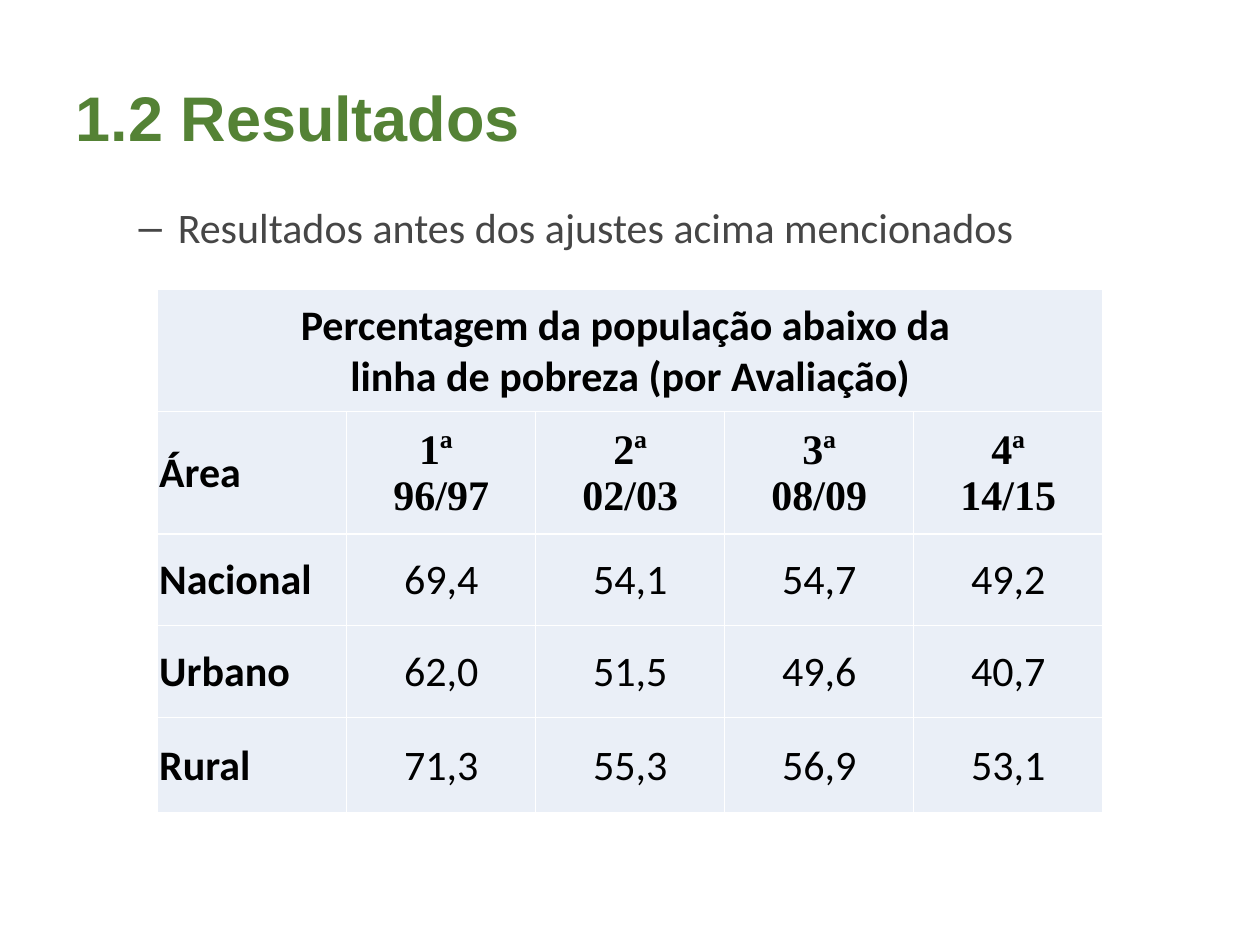
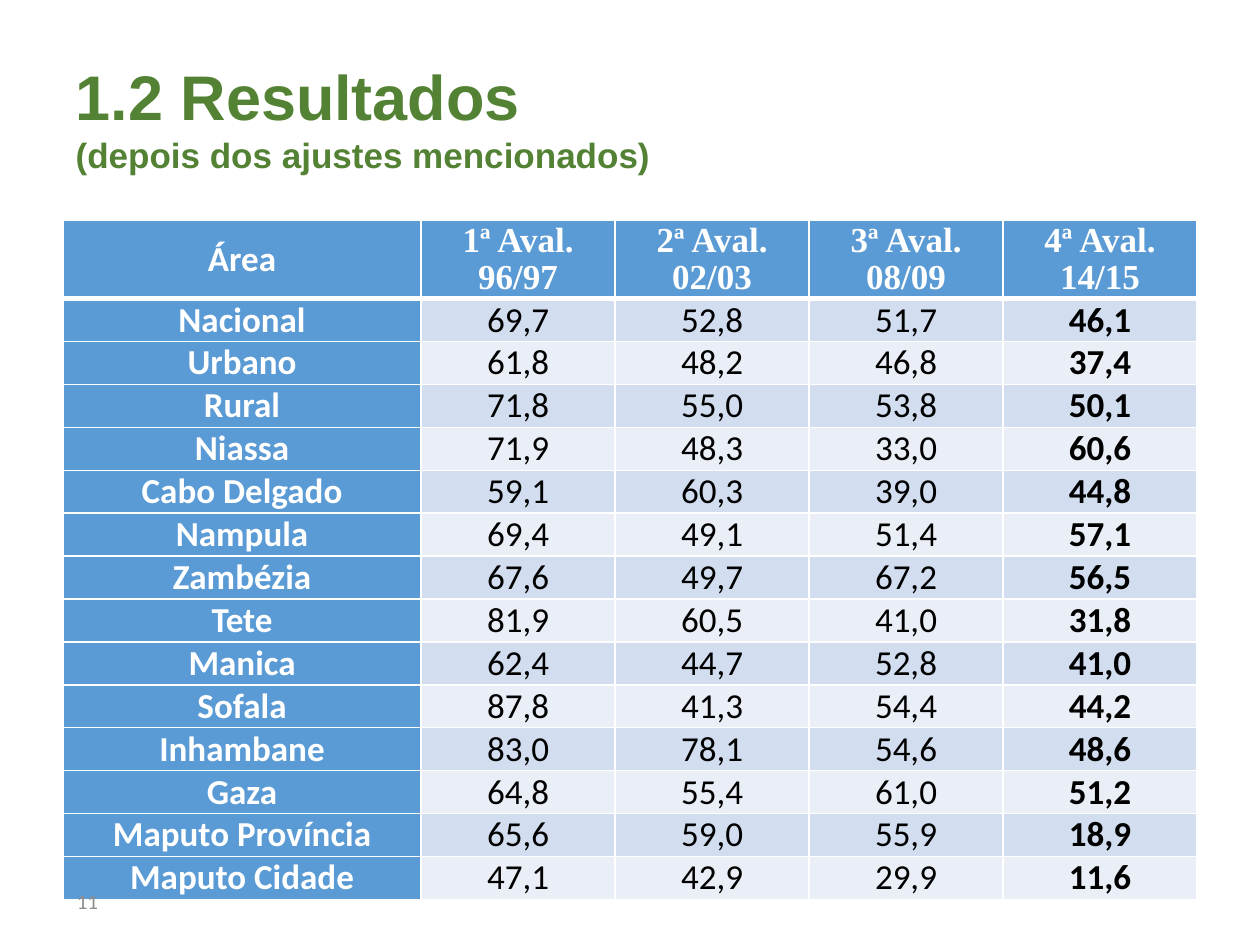
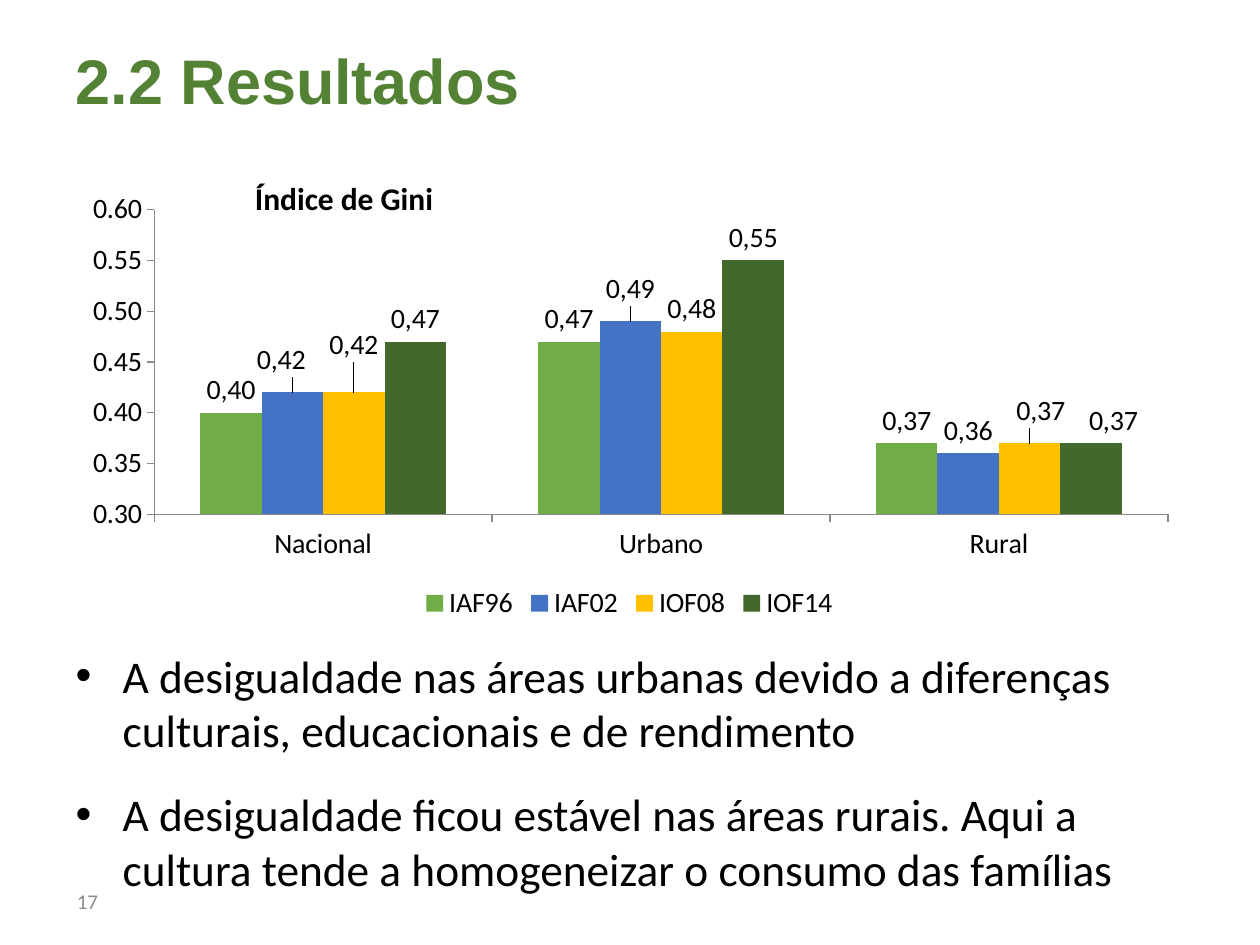
import pptx
import pptx.chart.data
import pptx.dml.color
import pptx.enum.chart
import pptx.enum.text
import pptx.util
from lxml import etree
from pptx.oxml.ns import qn

Cm, Pt = pptx.util.Cm, pptx.util.Pt
color = pptx.dml.color.RGBColor.from_string
ALIGN = pptx.enum.text.PP_ALIGN
ANCHOR = pptx.enum.text.MSO_ANCHOR

GREEN, BLACK, WHITE, GREY = "548235", "000000", "FFFFFF", "8C8C8C"
BLUE, PALE, BAND = "5B9BD5", "EAEFF7", "D2DEEF"
HEADING, BODY, SERIF = "Arial", "Calibri", "Times New Roman"


def style_font(font, name, size, hex_color, bold=False):
    font.name, font.size, font.bold = name, Pt(size), bold
    font.color.rgb = color(hex_color)


def place(parent, index, **values):
    """Give a chart part a manual layout, as fractions of the chart."""
    for old_layout in parent.findall(qn("c:layout")):
        parent.remove(old_layout)
    layout = etree.Element(qn("c:layout"))
    manual = etree.SubElement(layout, qn("c:manualLayout"))
    for key, value in values.items():
        etree.SubElement(manual, qn("c:" + key), val=str(value))
    parent.insert(index, layout)


presentation = pptx.Presentation()
presentation.slide_width, presentation.slide_height = Cm(25.4), Cm(19.05)

# Titles and page numbers: layout, title lines, title top, page number
slides = []
for layout_index, lines, top, number in [
    (1, ["1.2 Resultados"], 0.76, None),
    (5, ["1.2 Resultados", "(depois dos ajustes mencionados)"], 0.76, "11"),
    (1, ["2.2 Resultados"], 0, "17"),
]:
    slide = presentation.slides.add_slide(presentation.slide_layouts[layout_index])
    slides.append((slide, number))
    title = slide.shapes.title
    title.left, title.top, title.width, title.height = Cm(1.27), Cm(top), Cm(22.86), Cm(3.18)
    frame = title.text_frame
    frame.text = "\v".join(lines)
    frame.auto_size = pptx.enum.text.MSO_AUTO_SIZE.NONE
    frame.vertical_anchor = ANCHOR.MIDDLE
    frame.paragraphs[0].alignment = ALIGN.LEFT
    for run, size in zip(frame.paragraphs[0].runs, (36, 20)):
        style_font(run.font, HEADING, size, GREEN, True)

before_slide, after_slide, gini_slide = [slide for slide, number in slides]

# Bullet lists: slide, top, height, level, bullet, margin, hanging, size, colour, items
for slide, top, height, level, bullet, margin, hanging, size, hex_color, items in [
    (before_slide, 3.94, 13.08, 1, "–", 2.06, 0.79, 24, "464646",
     ["Resultados antes dos ajustes acima mencionados"]),
    (gini_slide, 12.93, 4.72, 0, "•", 0.95, 0.95, 25.9, BLACK,
     ["A desigualdade nas áreas urbanas devido a diferenças culturais, "
      "educacionais e de rendimento",
      "A desigualdade ficou estável nas áreas rurais. Aqui a cultura tende "
      "a homogeneizar o consumo das famílias"]),
]:
    body = slide.placeholders[1]
    body.left, body.top, body.width, body.height = Cm(1.27), Cm(top), Cm(22.86), Cm(height)
    body.text_frame.text = "\n".join(items)
    body.text_frame.auto_size = pptx.enum.text.MSO_AUTO_SIZE.NONE
    for index, paragraph in enumerate(body.text_frame.paragraphs):
        paragraph.level = level
        properties = paragraph._p.get_or_add_pPr()
        properties.set("marL", str(Cm(margin)))
        properties.set("indent", str(-Cm(hanging)))
        etree.SubElement(properties, qn("a:buChar"), char=bullet)
        paragraph.space_before = Pt(5 if index else 0)
        paragraph.space_after = Pt(12)
        style_font(paragraph.runs[0].font, BODY, size, hex_color)

# Poverty rates before and after the adjustments
before_rows = [
    ["Percentagem da população abaixo da \nlinha de pobreza (por Avaliação)"],
    ["Área", "1ª \n96/97", "2ª\n02/03", "3ª\n08/09", "4ª\n14/15"],
    ["Nacional", "69,4", "54,1", "54,7", "49,2"],
    ["Urbano", "62,0", "51,5", "49,6", "40,7"],
    ["Rural", "71,3", "55,3", "56,9", "53,1"],
]
after_rows = [
    ["Área", "1ª Aval.\n96/97", "2ª Aval.\n02/03", "3ª Aval.\n08/09", "4ª Aval.\n14/15"],
    ["Nacional", "69,7", "52,8", "51,7", "46,1"],
    ["Urbano", "61,8", "48,2", "46,8", "37,4"],
    ["Rural", "71,8", "55,0", "53,8", "50,1"],
    ["Niassa", "71,9", "48,3", "33,0", "60,6"],
    ["Cabo Delgado", "59,1", "60,3", "39,0", "44,8"],
    ["Nampula", "69,4", "49,1", "51,4", "57,1"],
    ["Zambézia", "67,6", "49,7", "67,2", "56,5"],
    ["Tete", "81,9", "60,5", "41,0", "31,8"],
    ["Manica", "62,4", "44,7", "52,8", "41,0"],
    ["Sofala", "87,8", "41,3", "54,4", "44,2"],
    ["Inhambane", "83,0", "78,1", "54,6", "48,6"],
    ["Gaza", "64,8", "55,4", "61,0", "51,2"],
    ["Maputo Província", "65,6", "59,0", "55,9", "18,9"],
    ["Maputo Cidade", "47,1", "42,9", "29,9", "11,6"],
]
for slide, rows, left, top, widths, heights, size, header, bold_columns in [
    (before_slide, before_rows, 3.18, 5.84, [3.81] * 5,
     [2.46, 2.46, 1.85, 1.85, 1.93], 24, 1, (0,)),
    (after_slide, after_rows, 1.27, 4.45, [7.22] + [3.91] * 4,
     [1.57] + [0.86] * 14, 20, 0, (0, 4)),
]:
    banded = slide is after_slide
    table = slide.shapes.add_table(len(rows), 5, Cm(left), Cm(top),
                                   Cm(sum(widths)), Cm(sum(heights))).table
    table.first_row = table.horz_banding = False
    for column, width in zip(table.columns, widths):
        column.width = Cm(width)
    for table_row, height in zip(table.rows, heights):
        table_row.height = Cm(height)
    if len(rows[0]) == 1:
        table.cell(0, 0).merge(table.cell(0, 4))

    for row, texts in enumerate(rows):
        for column, text in enumerate(texts):
            cell = table.cell(row, column)
            blue = banded and (row == 0 or column == 0)
            cell.margin_left = cell.margin_right = cell.margin_top = Cm(0 if banded else 0.03)
            cell.margin_bottom = 0
            cell.vertical_anchor = ANCHOR.MIDDLE
            cell.text_frame.text = text
            for paragraph in cell.text_frame.paragraphs:
                left_column = column == 0 and row > 0 and not banded
                paragraph.alignment = ALIGN.JUSTIFY if left_column else ALIGN.CENTER
                if banded and row == 0:
                    paragraph.line_spacing = 0.95
                style_font(paragraph.runs[0].font,
                           SERIF if row == header and column else BODY, size,
                           WHITE if blue else BLACK,
                           row <= header or column in bold_columns)
            # White rules, thicker below the blue header
            properties = cell._tc.get_or_add_tcPr()
            for side in ("lnL", "lnR", "lnT", "lnB"):
                thick = banded and (row, side) in ((0, "lnB"), (1, "lnT"))
                line = etree.SubElement(properties, qn("a:" + side), w=str(Pt(3 if thick else 1)))
                line_fill = etree.SubElement(line, qn("a:solidFill"))
                etree.SubElement(line_fill, qn("a:srgbClr"), val=WHITE)
            cell.fill.solid()
            cell.fill.fore_color.rgb = color(BLUE if blue else BAND if banded and row % 2 else PALE)

# Gini chart
categories = ["Nacional", "Urbano", "Rural"]
surveys = [
    ("IAF96", "70AD47", (0.40, 0.47, 0.37)),
    ("IAF02", "4472C4", (0.42, 0.49, 0.36)),
    ("IOF08", "FFC000", (0.42, 0.48, 0.37)),
    ("IOF14", "43682B", (0.47, 0.55, 0.37)),
]
label_shifts = {
    ("IAF02", 0): (-0.01, -0.02), ("IOF08", 0): (0, -0.05), ("IAF02", 1): (0, -0.02),
    ("IOF08", 2): (0.01, -0.02), ("IOF14", 2): (0.02, 0),
}
chart_data = pptx.chart.data.CategoryChartData(number_format="0.00")
chart_data.categories = categories
for name, hex_color, values in surveys:
    chart_data.add_series(name, values)
chart = gini_slide.shapes.add_chart(
    pptx.enum.chart.XL_CHART_TYPE.COLUMN_CLUSTERED,
    Cm(1.42), Cm(2.31), Cm(22.53), Cm(10.31), chart_data).chart
style_font(chart.font, BODY, 16, BLACK)

chart.has_title = True
chart_title = chart.chart_title
chart_title.text_frame.text = "Índice de Gini"
style_font(chart_title.text_frame.paragraphs[0].runs[0].font, BODY, 18, BLACK, True)
title_element = chart_title._element
place(title_element, 1, xMode="edge", yMode="edge", x=0.16, y=0.11)
for overlay in title_element.findall(qn("c:overlay")):
    overlay.set("val", "1")
place(chart._chartSpace.chart.plotArea, 0, layoutTarget="inner", xMode="edge",
      yMode="edge", x=0.075, y=0.186, w=0.907, h=0.596)

chart.has_legend = True
chart.legend.position = pptx.enum.chart.XL_LEGEND_POSITION.BOTTOM
chart.legend.include_in_layout = False
style_font(chart.legend.font, BODY, 16, BLACK)

value_axis = chart.value_axis
value_axis.minimum_scale, value_axis.maximum_scale, value_axis.major_unit = 0.3, 0.6, 0.05
value_axis.has_major_gridlines = False
value_axis.tick_labels.number_format = "0.00"
value_axis.tick_labels.number_format_is_linked = False
for axis in (chart.category_axis, value_axis):
    axis.major_tick_mark = pptx.enum.chart.XL_TICK_MARK.OUTSIDE
    axis.format.line.color.rgb = color("888888")
    axis.format.line.width = Pt(0.75)
    style_font(axis.tick_labels.font, BODY, 16, BLACK)

plot = chart.plots[0]
plot.gap_width, plot.overlap, plot.vary_by_categories = 150, 0, False
outside_end = pptx.enum.chart.XL_LABEL_POSITION.OUTSIDE_END
for series, (name, hex_color, values) in zip(plot.series, surveys):
    series.format.fill.solid()
    series.format.fill.fore_color.rgb = color(hex_color)
    labels = series.data_labels
    labels.show_value, labels.position = True, outside_end
    labels.number_format, labels.number_format_is_linked = "0.00", False
    style_font(labels.font, BODY, 16, BLACK)
    for index, value in enumerate(values):
        label = series.points[index].data_label
        label.text_frame.text = f"{value:.2f}".replace(".", ",")
        style_font(label.text_frame.paragraphs[0].runs[0].font, BODY, 16, BLACK)
        label.position = outside_end
        if (name, index) in label_shifts:
            shift_x, shift_y = label_shifts[name, index]
            place(labels._element.findall(qn("c:dLbl"))[index], 1, x=shift_x, y=shift_y)

# Page numbers, on top of everything else
for slide, number in slides:
    if number:
        box = slide.shapes.add_textbox(Cm(1.3), Cm(17.65), Cm(6.32), Cm(1.02))
        box.text_frame.word_wrap = True
        box.text_frame.vertical_anchor = ANCHOR.MIDDLE
        box.text_frame.text = number
        style_font(box.text_frame.paragraphs[0].runs[0].font, BODY, 12, GREY)

presentation.save("out.pptx")
